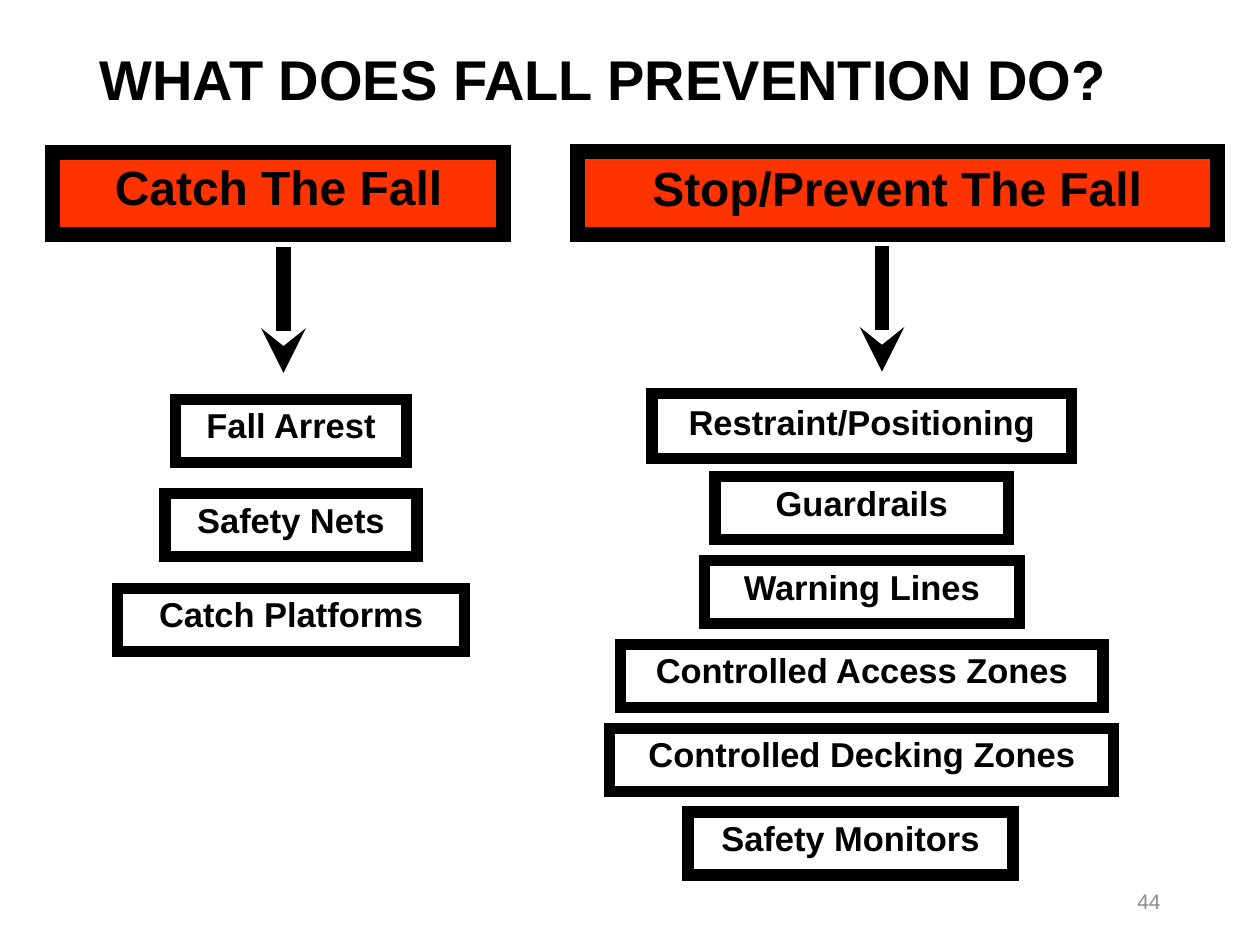
from pptx import Presentation
from pptx.dml.color import RGBColor
from pptx.enum.shapes import MSO_CONNECTOR, MSO_SHAPE
from pptx.enum.text import MSO_ANCHOR, PP_ALIGN
from pptx.oxml.ns import qn
from pptx.util import Inches, Pt
from lxml import etree

RECT, STRAIGHT = MSO_SHAPE.RECTANGLE, MSO_CONNECTOR.STRAIGHT
LEFT, CENTER, RIGHT = PP_ALIGN.LEFT, PP_ALIGN.CENTER, PP_ALIGN.RIGHT
TOP, MIDDLE = MSO_ANCHOR.TOP, MSO_ANCHOR.MIDDLE

# Content: each column has a heading, an arrow and a stack of (label, width)
TITLE = "WHAT DOES FALL PREVENTION DO?"
PAGE = "44"
COLUMNS = [
    {"heading": "Catch The Fall", "box": (0.42, 1.21, 3.58, 0.65), "inset": (0.07, 0.04),
     "arrow": (2.25, 1.96), "center": 2.31, "top": 3.17, "step": 0.75,
     "items": [("Fall Arrest", 1.83), ("Safety Nets", 2), ("Catch Platforms", 2.75)]},
    {"heading": "Stop/Prevent The Fall", "box": (4.58, 1.2, 5.08, 0.66), "inset": (0.1, 0.06),
     "arrow": (7, 1.95), "center": 6.84, "top": 3.12, "step": 0.665,
     "items": [("Restraint/Positioning", 3.33), ("Guardrails", 2.33),
               ("Warning Lines", 2.5), ("Controlled Access Zones", 3.83),
               ("Controlled Decking Zones", 4), ("Safety Monitors", 2.58)]},
]
SHIFT = {"Safety Monitors": -0.09}
TALL = {"Restraint/Positioning": (0.52, (0.1, 0.06))}
NORMAL = (0.5, (0.07, 0.04))
ARROW_LENGTH = 1
COLORS = {"ink": "000000", "heading": "FF3300", "page": "8C8C8C"}
FONT = "Arial"


def rgb(name):
    return RGBColor.from_string(COLORS[name])


def write(shape, text, size, color="ink", bold=True, align=CENTER, anchor=TOP,
          inset=(0.1, 0.06), spacing=None):
    tf = shape.text_frame
    tf.word_wrap = True
    tf.vertical_anchor = anchor
    tf.margin_left = tf.margin_right = Inches(inset[0])
    tf.margin_top = tf.margin_bottom = Inches(inset[1])
    p = tf.paragraphs[0]
    p.alignment = align
    p.line_spacing = spacing
    r = p.add_run()
    r.text = text
    r.font.name, r.font.size, r.font.bold = FONT, Pt(size), bold
    r.font.color.rgb = rgb(color)


def add_box(s, text, box, size, border, inset, fill=None):
    sp = s.shapes.add_shape(RECT, *map(Inches, box))
    sp.shadow.inherit = False
    if fill:
        sp.fill.solid()
        sp.fill.fore_color.rgb = rgb(fill)
    else:
        sp.fill.background()
    sp.line.color.rgb = rgb("ink")
    sp.line.width = Pt(border)
    ln = sp.line._get_or_add_ln()
    etree.SubElement(ln, qn("a:miter")).set("lim", "800000")
    write(sp, text, size, inset=inset)


def add_arrow(s, x, y):
    c = s.shapes.add_connector(STRAIGHT, Inches(x), Inches(y),
                               Inches(x), Inches(y + ARROW_LENGTH))
    c.line.color.rgb = rgb("ink")
    c.line.width = Pt(8.53)
    etree.SubElement(c.line._get_or_add_ln(), qn("a:tailEnd")).set("type", "stealth")
    etree.SubElement(c._element.spPr, qn("a:effectLst"))


prs = Presentation()
prs.slide_width, prs.slide_height = Inches(10), Inches(7.5)
s = prs.slides.add_slide(prs.slide_layouts[5])

# Title
title = s.shapes.title
title.left, title.top, title.width, title.height = map(Inches, (0.69, 0.23, 8.62, 0.85))
write(title, TITLE, 32, align=LEFT, anchor=MIDDLE, spacing=0.9)

# Columns: heading, arrow, then boxes centred on the column
for col in COLUMNS:
    add_box(s, col["heading"], col["box"], 27.4, 8.53, col["inset"], fill="heading")
    add_arrow(s, *col["arrow"])
    for i, (label, width) in enumerate(col["items"]):
        height, inset = TALL.get(label, NORMAL)
        left = col["center"] + SHIFT.get(label, 0) - width / 2
        top = col["top"] + i * col["step"]
        add_box(s, label, (left, top, width, height), 19.7, 6.4, inset)

# Slide number
page = s.shapes.add_textbox(*map(Inches, (7.06, 6.95, 2.25, 0.4)))
write(page, PAGE, 12, color="page", bold=False, align=RIGHT, anchor=MIDDLE, inset=(0.1, 0.05))

prs.save("out.pptx")
